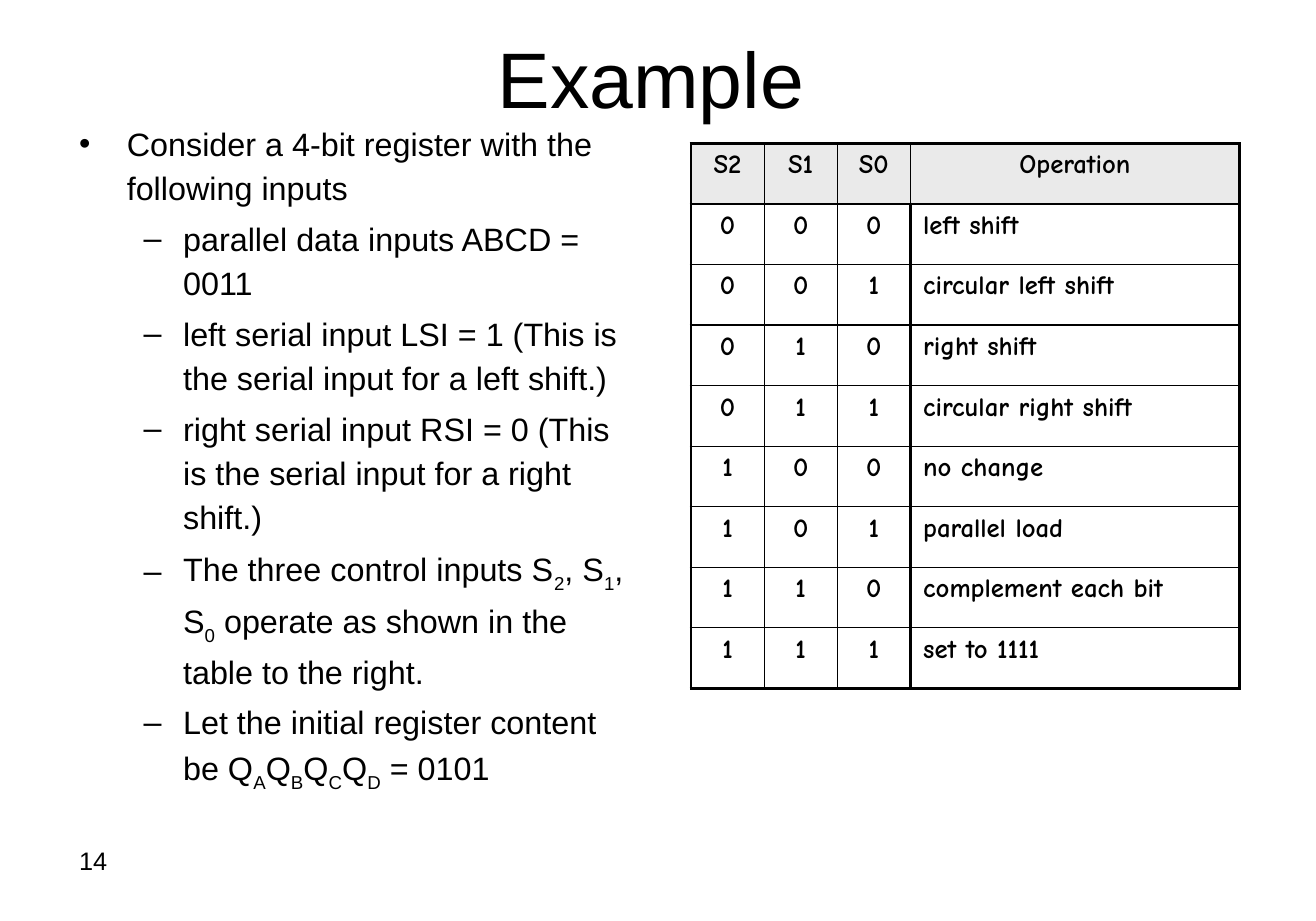
import pptx
import pptx.dml.color
import pptx.enum.text
import pptx.oxml
import pptx.util
from pptx.oxml.ns import qn

Pt = pptx.util.Pt
ALIGN = pptx.enum.text.PP_ALIGN
ANCHOR = pptx.enum.text.MSO_ANCHOR
INK, PAPER, HEADER = "000000", "FFFFFF", "EAEAEA"
THIN, THICK = 1, 2.25
INSET_X, INSET_Y = 9.2, 4.6

# Text between bars is subscript
BULLETS = [
    (0, "Consider a 4-bit register with the following inputs"),
    (1, "parallel data inputs ABCD = 0011"),
    (1, "left serial input LSI = 1 (This is the serial input for a left shift.)"),
    (1, "right serial input RSI = 0 (This is the serial input for a right shift.)"),
    (1, "The three control inputs S|2|, S|1|, S|0| operate as shown in the table to the right."),
    (1, "Let the initial register content be Q|A|Q|B|Q|C|Q|D| = 0101"),
]
LEVELS = [("•", 34, -34), ("–", 74, -28)]  # bullet, margin, indent
OPERATIONS = ["left shift", "circular left shift", "right shift", "circular right shift",
              "no change", "parallel load", "complement each bit", "set to 1111"]


def color(hex_value):
    return pptx.dml.color.RGBColor.from_string(hex_value)


def style(r, size, name="Arial", bold=False):
    r.font.size, r.font.name, r.font.bold = Pt(size), name, bold
    r.font.color.rgb = color(INK)


def set_margins(part):
    part.margin_left = part.margin_right = Pt(INSET_X)
    part.margin_top = part.margin_bottom = Pt(INSET_Y)


def place(sp, box, anchor=ANCHOR.TOP):
    sp.left, sp.top, sp.width, sp.height = (Pt(v) for v in box)
    tf = sp.text_frame
    tf.word_wrap = True
    tf.auto_size = pptx.enum.text.MSO_AUTO_SIZE.NONE
    tf.vertical_anchor = anchor
    set_margins(tf)
    return tf


def add_title(s, box):
    tf = place(s.shapes.title, box, ANCHOR.MIDDLE)
    tf.text = "Example"
    p = tf.paragraphs[0]
    p.alignment = ALIGN.CENTER
    style(p.runs[0], 56)


def add_bullets(s, box):
    tf = place(s.placeholders[1], box)
    for i, (level, text) in enumerate(BULLETS):
        p = tf.add_paragraph() if i else tf.paragraphs[0]
        char, margin, indent = LEVELS[level]
        p.level = level
        p.alignment = ALIGN.LEFT
        p.line_spacing = 1.14
        p.space_before = Pt(4.6 if i else 0)
        pPr = p._p.get_or_add_pPr()
        pPr.set("marL", str(Pt(margin)))
        pPr.set("indent", str(Pt(indent)))
        pptx.oxml.xmlchemy.OxmlElement  # element factory used below
        bullet = pptx.oxml.xmlchemy.OxmlElement("a:buChar")
        bullet.set("char", char)
        pPr.append(bullet)
        for k, piece in enumerate(text.split("|")):
            r = p.add_run()
            r.text = piece
            style(r, 23)
            if k % 2:
                r._r.get_or_add_rPr().set("baseline", "-30000")


def set_borders(cell, widths):
    tcPr = cell._tc.get_or_add_tcPr()
    for side, width in zip("LRTB", widths):
        ln = pptx.oxml.parse_xml(
            f'<a:ln{side} xmlns:a="http://schemas.openxmlformats.org/drawingml/2006/main" '
            f'w="{Pt(width)}"><a:solidFill><a:srgbClr val="{INK}"/></a:solidFill></a:ln{side}>')
        tcPr.append(ln)


def add_operations(s, box):
    # Rows count up in binary through the control inputs
    rows = [["S2", "S1", "S0", "Operation"]]
    rows += [[*f"{n:03b}", name] for n, name in enumerate(OPERATIONS)]
    left, top, width, height = box
    frame = s.shapes.add_table(len(rows), 4, Pt(left), Pt(top), Pt(width), Pt(height))
    table = frame.table
    table.first_row = table.horz_banding = False
    bit_width = 52
    for c, column in enumerate(table.columns):
        column.width = Pt(bit_width if c < 3 else width - 3 * bit_width)
    for row in table.rows:
        row.height = Pt(height / len(rows))

    # Thick frame, header rule and divider before the operation names
    def v_edge(r, c):
        return THICK if c in (0, 4) or (c == 3 and r > 0) else THIN

    def h_edge(r):
        return THICK if r in (0, 1, len(rows)) else THIN

    for i, values in enumerate(rows):
        for c, value in enumerate(values):
            cell = table.cell(i, c)
            set_margins(cell)
            set_borders(cell, (v_edge(i, c), v_edge(i, c + 1), h_edge(i), h_edge(i + 1)))
            cell.fill.solid()
            cell.fill.fore_color.rgb = color(PAPER if i else HEADER)
            cell.text_frame.text = value
            p = cell.text_frame.paragraphs[0]
            p.alignment = ALIGN.LEFT if i and c == 3 else ALIGN.CENTER
            style(p.runs[0], 19, "Comic Neue", True)


def add_page_number(s, box):
    tf = place(s.shapes.add_textbox(0, 0, 0, 0), box)
    tf.text = "14"
    style(tf.paragraphs[0].runs[0], 18)


def main():
    prs = pptx.Presentation()
    prs.slide_width, prs.slide_height = Pt(936), Pt(655.2)
    s = prs.slides.add_slide(prs.slide_layouts[1])
    add_page_number(s, (47, 597, 218, 45))
    add_title(s, (42, 0, 842, 109.5))
    add_bullets(s, (47, 80, 413, 538.5))
    add_operations(s, (491.5, 102, 390, 388))
    prs.save("out.pptx")


if __name__ == "__main__":
    main()
